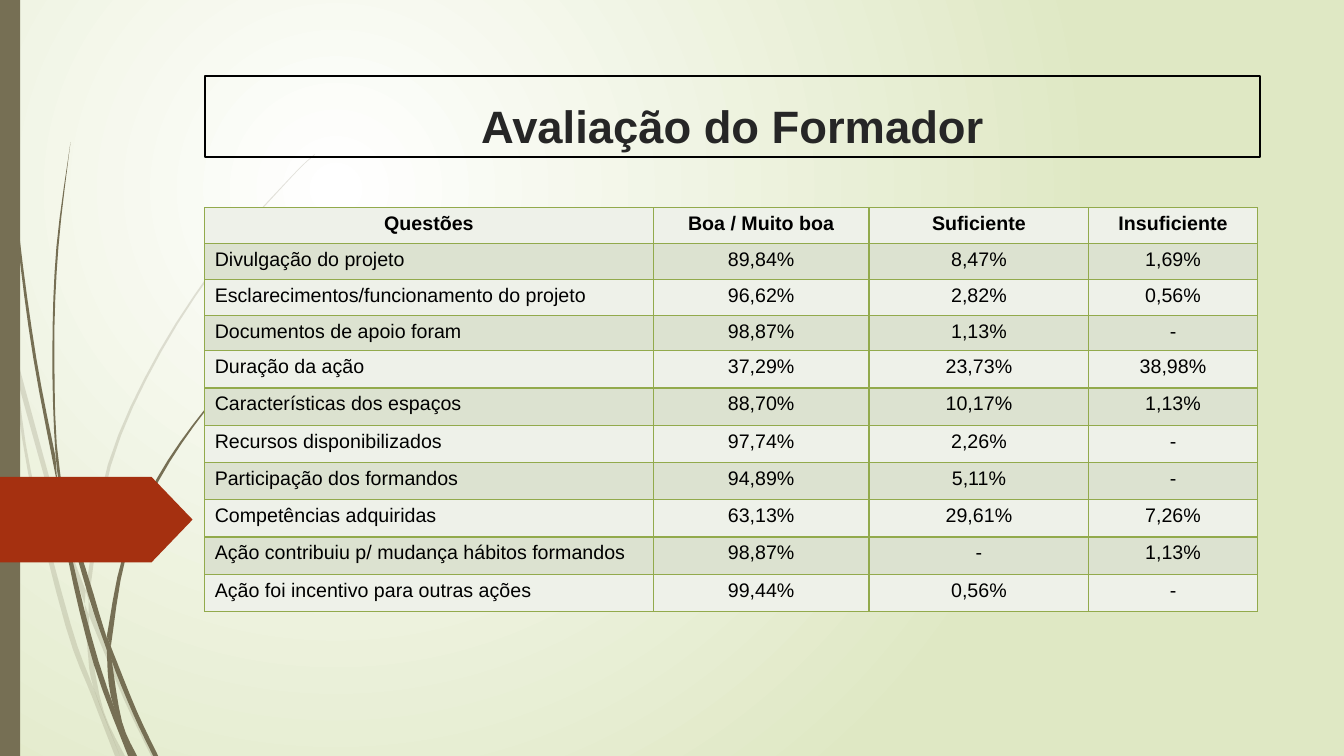
"""Build the trainer evaluation slide."""
from lxml import etree
from pptx import Presentation
from pptx import util as u
from pptx.dml.color import RGBColor
from pptx.enum import shapes, text
from pptx.oxml import ns

OLIVE, RUST, BORDER = "766F54", "A53010", "92AA4C"
BANDS = ["EEF1E9", "DCE2D0"]
COLS = [4.45, 2.14, 2.18, 1.67]
ROW_HEIGHTS = [0.36, 0.35] * 2 + [0.37] * 7
ROWS = [
    ("Questões", "Boa / Muito boa", "Suficiente", "Insuficiente"),
    ("Divulgação do projeto", "89,84%", "8,47%", "1,69%"),
    ("Esclarecimentos/funcionamento do projeto", "96,62%", "2,82%", "0,56%"),
    ("Documentos de apoio foram", "98,87%", "1,13%", "-"),
    ("Duração da ação", "37,29%", "23,73%", "38,98%"),
    ("Características dos espaços", "88,70%", "10,17%", "1,13%"),
    ("Recursos disponibilizados", "97,74%", "2,26%", "-"),
    ("Participação dos formandos", "94,89%", "5,11%", "-"),
    ("Competências adquiridas", "63,13%", "29,61%", "7,26%"),
    ("Ação contribuiu p/ mudança hábitos formandos", "98,87%", "-", "1,13%"),
    ("Ação foi incentivo para outras ações", "99,44%", "0,56%", "-"),
]
PALE_BLADES = [
    ([(0, 2.82), (0, 2.99), (0.1, 3.44), (0.17, 3.76), (0.58, 5.22), (0.84, 5.99)],
     [(0, 2.82), (0.09, 3.22), (0.14, 3.45), (0.62, 5.2), (0.85, 5.86)]),
    ([(0.11, 3.5), (0.28, 4.7), (0.65, 6.21), (0.92, 6.93), (1.14, 7.5)],
     [(0.11, 3.5), (0.17, 3.76), (0.31, 4.69), (0.7, 6.19), (0.93, 6.83), (1.19, 7.5)]),
    ([(0.84, 5.99), (0.87, 6.46), (0.93, 6.83), (1.19, 7.5)],
     [(0.88, 6.1), (0.91, 6.46), (1.03, 7.06), (1.24, 7.5)]),
    ([(0.88, 6.1), (1.23, 6.94), (1.5, 7.5)],
     [(0.88, 5.96), (1.27, 6.92), (1.55, 7.5)]),
    ([(0.85, 5.86), (1.07, 4.61), (1.58, 3.48), (2.28, 2.44), (2.89, 1.75), (3.12, 1.53)],
     [(0.88, 5.96), (1.1, 4.62), (1.6, 3.49), (2.29, 2.45), (2.9, 1.75), (3.12, 1.54)]),
]
DARK_BLADES = [
    ([(0.03, 0), (0.07, 1.1), (0.17, 2.33), (0.33, 3.55), (0.57, 4.81)],
     [(0.04, 0), (0.08, 1.09), (0.19, 2.32), (0.36, 3.55), (0.55, 4.53)]),
    ([(0.7, 1.41), (0.56, 2.45), (0.52, 3.49), (0.55, 4.49), (0.64, 5.05), (0.88, 5.92), (1.06, 6.45)],
     [(0.7, 1.41), (0.58, 2.45), (0.54, 3.49), (0.6, 4.72), (0.93, 5.9), (1.06, 6.33)]),
    ([(0.57, 4.77), (0.68, 5.57), (0.93, 6.59), (1.27, 7.5)],
     [(0.57, 4.77), (0.64, 5.05), (0.72, 5.56), (0.98, 6.57), (1.31, 7.5)]),
    ([(1.06, 6.31), (1.06, 6.45), (1.1, 6.91), (1.3, 7.5)],
     [(1.1, 6.41), (1.11, 6.56), (1.21, 7.16), (1.36, 7.5)]),
    ([(1.1, 6.41), (1.11, 6.56), (1.32, 7.08), (1.52, 7.5)],
     [(1.1, 6.41), (1.13, 6.49), (1.36, 7.06), (1.57, 7.5)]),
    ([(1.06, 6.31), (1.22, 5.51), (1.56, 4.74), (2.04, 4.05), (2.6, 3.44)],
     [(1.1, 6.41), (1.25, 5.52), (1.58, 4.76), (2.05, 4.06), (2.61, 3.44)]),
]


def rgb(hex_code):
    """Turn a hex string into a colour."""
    return RGBColor.from_string(hex_code)


def paint(sp, color, alpha=None):
    """Fill a shape without line or shadow, optionally translucent."""
    sp.shadow.inherit = False
    sp.fill.solid()
    sp.fill.fore_color.rgb = rgb(color)
    sp.line.fill.background()
    if alpha:
        clr = sp._element.spPr.find(ns.qn("a:solidFill"))[0]
        etree.SubElement(clr, ns.qn("a:alpha"), val=str(alpha * 1000))


def style_text(p, size, color, bold, align):
    """Format the runs of a paragraph."""
    p.alignment = align
    for r in p.runs:
        r.font.name, r.font.size, r.font.bold = "Arial", u.Pt(size), bold
        r.font.color.rgb = rgb(color)


def smooth(points, steps=4):
    """Trace a Catmull-Rom curve through the points."""
    pts = [points[0], *points, points[-1]]
    curve = [points[0]]
    for a, b, c, d in zip(pts, pts[1:], pts[2:], pts[3:]):
        for i in range(1, steps + 1):
            t = i / steps
            curve.append(tuple(
                (2 * q + (r - p) * t + (2 * p - 5 * q + 4 * r - v) * t ** 2
                 + (3 * q - p - 3 * r + v) * t ** 3) / 2
                for p, q, r, v in zip(a, b, c, d)))
    return curve


def add_blade(s, left, right, alpha=None):
    """Draw a grass blade between two curved edges."""
    outline = [(u.Inches(x), u.Inches(y)) for x, y in smooth(left) + smooth(right)[::-1]]
    fb = s.shapes.build_freeform(*outline[0])
    fb.add_line_segments(outline[1:], close=True)
    paint(fb.convert_to_shape(), OLIVE, alpha)


def add_block(s, kind, x, y, w, h, color):
    """Add a plain filled preset shape."""
    sp = s.shapes.add_shape(kind, *map(u.Inches, (x, y, w, h)))
    paint(sp, color)
    return sp


def set_background(s):
    """Give the slide a circular gradient from white to pale green."""
    fill = s.background.fill
    fill.gradient()
    for stop, color, pos in zip(fill.gradient_stops, ("FFFFFF", "DFE8C4"), (0, 1)):
        stop.color.rgb, stop.position = rgb(color), pos
    grad = s._element.find(".//" + ns.qn("a:gradFill"))
    grad.remove(grad.find(ns.qn("a:lin")))
    circle = etree.SubElement(grad, ns.qn("a:path"), path="circle")
    etree.SubElement(circle, ns.qn("a:fillToRect"), l="50000", t="50000", r="100000", b="100000")


def set_title(s, title):
    """Place the framed title in front of the decoration."""
    sp = s.shapes.title
    s.shapes._spTree.append(sp._element)
    sp.left, sp.top, sp.width, sp.height = map(u.Inches, (2.03, 0.75, 10.47, 0.81))
    sp.line.color.rgb, sp.line.width = rgb("000000"), u.Pt(1.5)
    tf = sp.text_frame
    tf.text = title
    tf.auto_size = text.MSO_AUTO_SIZE.NONE
    tf.vertical_anchor = text.MSO_ANCHOR.BOTTOM
    p = tf.paragraphs[0]
    p.line_spacing = 1.5
    style_text(p, 32.4, "262626", True, text.PP_ALIGN.CENTER)


def set_borders(cell):
    """Outline a cell with thin green lines."""
    tcPr = cell._tc.get_or_add_tcPr()
    for i, side in enumerate(("lnL", "lnR", "lnT", "lnB")):
        ln = etree.Element(ns.qn("a:" + side), w=str(u.Pt(1)))
        fill = etree.SubElement(ln, ns.qn("a:solidFill"))
        etree.SubElement(fill, ns.qn("a:srgbClr"), val=BORDER)
        tcPr.insert(i, ln)


def add_results(s):
    """Add the banded table of answers."""
    size = map(u.Inches, (2.03, 2.06, sum(COLS), sum(ROW_HEIGHTS)))
    table = s.shapes.add_table(len(ROWS), len(COLS), *size).table
    for col, width in zip(table.columns, COLS):
        col.width = u.Inches(width)
    for i, values in enumerate(ROWS):
        table.rows[i].height = u.Inches(ROW_HEIGHTS[i])
        for j, value in enumerate(values):
            cell = table.cell(i, j)
            cell.text_frame.text = value
            cell.fill.solid()
            cell.fill.fore_color.rgb = rgb(BANDS[i % 2])
            set_borders(cell)
            align = text.PP_ALIGN.LEFT if i and not j else text.PP_ALIGN.CENTER
            style_text(cell.text_frame.paragraphs[0], 14, "000000", i == 0, align)


def main():
    """Build and save the slide."""
    prs = Presentation()
    prs.slide_width, prs.slide_height = u.Inches(13.33), u.Inches(7.5)
    s = prs.slides.add_slide(prs.slide_layouts[5])
    set_background(s)
    for left, right in PALE_BLADES:
        add_blade(s, left, right, alpha=20)
    for left, right in DARK_BLADES:
        add_blade(s, left, right)
    add_block(s, shapes.MSO_SHAPE.RECTANGLE, 0, 0, 0.2, 7.5, OLIVE)
    arrow = add_block(s, shapes.MSO_SHAPE.PENTAGON, 0, 4.73, 1.91, 0.85, RUST)
    arrow.adjustments[0] = 0.48
    set_title(s, "Avaliação do Formador")
    add_results(s)
    prs.save("out.pptx")


if __name__ == "__main__":
    main()
